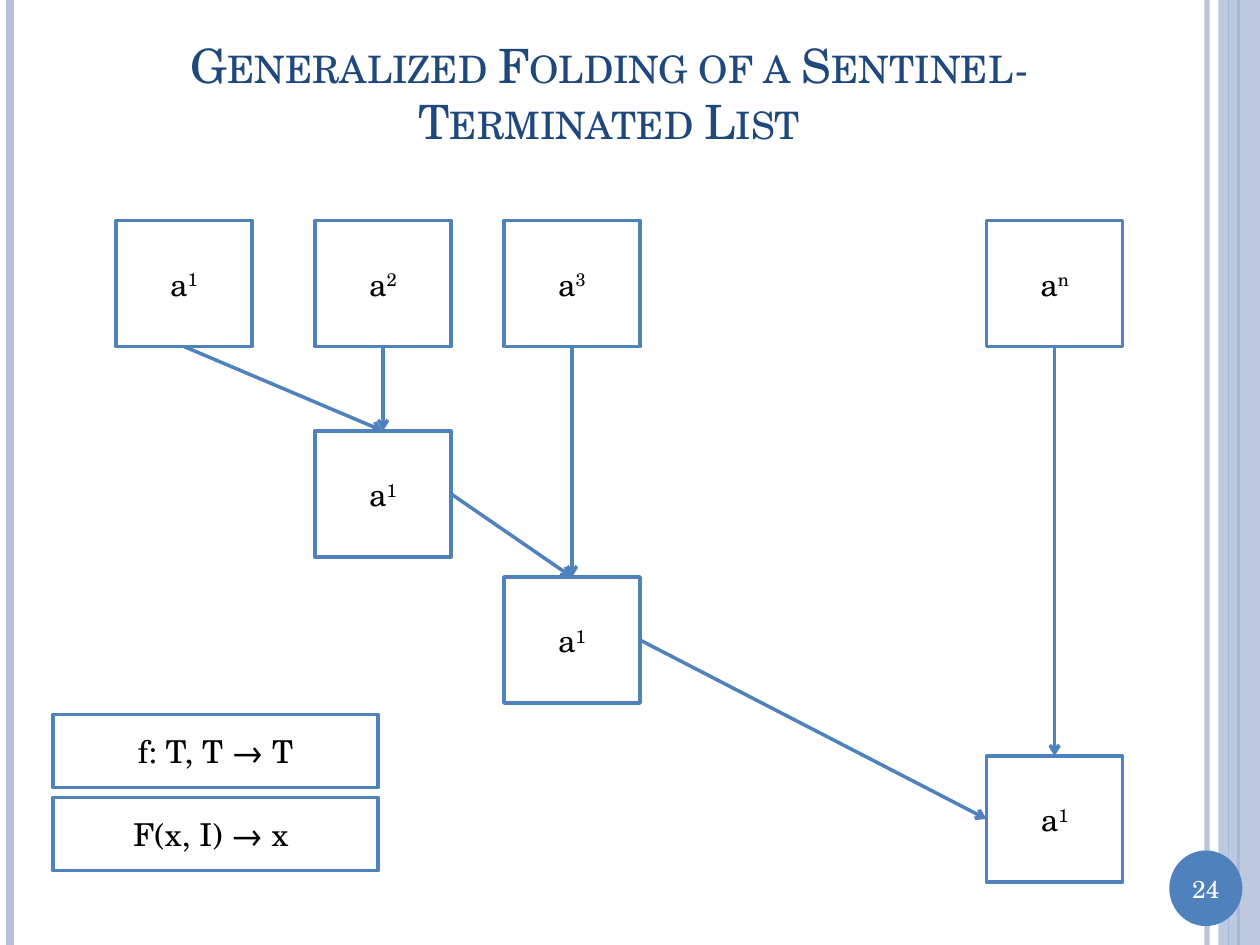
from lxml.etree import SubElement
from pptx import Presentation
from pptx.dml.color import RGBColor
from pptx.enum.shapes import MSO_CONNECTOR, MSO_SHAPE
from pptx.enum.text import MSO_ANCHOR, PP_ALIGN
from pptx.oxml.ns import qn
from pptx.util import Inches, Pt

TITLE = "Generalized Folding of a Sentinel-Terminated List"
SLIDE_NUMBER = "24"
COLUMNS = [0.92, 2.5, 4, 7.83]
INPUT_TOP = 1.75
INPUT_MARKS = ["1", "2", "3", "n"]
RESULT_TOPS = [3.42, 4.58, 6]
RESULT_MARK = "1"
CELL = (1.08, 1)
SIGNATURES = ["f: T, T → T", "F(x, I) → x "]
SIGNATURE_LEFT, SIGNATURE_TOP, SIGNATURE_STEP = 0.42, 5.67, 0.66
SIGNATURE_SIZE = (2.58, 0.58)
TOP, LEFT, BOTTOM, RIGHT = range(4)

THEME = {
    "font": "TeX Gyre Schola",
    "accent": "4F81BD", "stripe": "B3C1DB", "heading": "1F497D",
    "ink": "000000", "paper": "FFFFFF",
    "title": 27, "body": 18, "number": 14, "line": 2,
}
STRIPES = [
    (9.58, "stripe", 3, 93),
    (0.08, "stripe", 4.5, 100),
    (9.83, "accent", 1.5, 100),
    (9.75, "accent", 0.75, 100),
]


def color(role):
    return RGBColor.from_string(THEME[role])


def set_opacity(fill_parent, percent):
    srgb = next(fill_parent.iter(qn("a:srgbClr")))
    SubElement(srgb, qn("a:alpha"), val=str(percent * 1000))


def write(shape, text, size="body", ink="ink", superscript="", small_caps=False):
    frame = shape.text_frame
    frame.word_wrap = True
    frame.vertical_anchor = MSO_ANCHOR.MIDDLE
    paragraph = frame.paragraphs[0]
    paragraph.alignment = PP_ALIGN.CENTER
    for part, raised in ((text, False), (superscript, True)):
        if not part:
            continue
        run = paragraph.add_run()
        run.text = part
        run.font.name = THEME["font"]
        run.font.size = Pt(THEME[size])
        run.font.color.rgb = color(ink)
        properties = run.font._element
        if raised:
            properties.set("baseline", "30000")
        if small_caps:
            properties.set("cap", "small")


def add_panel(slide, box, kind=MSO_SHAPE.RECTANGLE, fill="paper", outline=None):
    panel = slide.shapes.add_shape(kind, *map(Inches, box))
    panel.shadow.inherit = False
    panel.fill.solid()
    panel.fill.fore_color.rgb = color(fill)
    if outline:
        panel.line.color.rgb = color(outline)
        panel.line.width = Pt(THEME["line"])
    else:
        panel.line.fill.background()
    return panel


def add_line(slide, start, end, role, width):
    line = slide.shapes.add_connector(
        MSO_CONNECTOR.STRAIGHT, *map(Inches, (*start, *end)))
    line.line.color.rgb = color(role)
    line.line.width = Pt(width)
    SubElement(line._element.spPr, qn("a:effectLst"))
    return line


def add_cell(slide, left, top, mark):
    cell = add_panel(slide, (left, top, *CELL), outline="accent")
    write(cell, "a", superscript=mark)
    return cell


def add_arrow(slide, source, source_side, target, target_side):
    arrow = add_line(slide, (0, 0), (1, 1), "accent", THEME["line"])
    arrow.begin_connect(source, source_side)
    arrow.end_connect(target, target_side)
    SubElement(arrow.line._get_or_add_ln(), qn("a:tailEnd"), type="arrow")


def add_frame(slide):
    for x, role, width, opacity in STRIPES:
        stripe = add_line(slide, (x, 0), (x, 7.5), role, width)
        if opacity < 100:
            set_opacity(stripe._element.spPr, opacity)
    band = add_panel(slide, (9.67, 0, 0.33, 7.5), fill="stripe")
    set_opacity(band._element.spPr, 87)
    add_panel(slide, (9.28, 6.75, 0.58, 0.6), MSO_SHAPE.OVAL, "accent")
    number = slide.shapes.add_textbox(*map(Inches, (9.28, 6.88, 0.58, 0.34)))
    write(number, SLIDE_NUMBER, size="number", ink="paper")


def add_title(slide):
    title = slide.shapes.title
    title.left, title.top, title.width, title.height = map(
        Inches, (0.5, 0.3, 8.67, 0.87))
    write(title, TITLE, size="title", ink="heading", small_caps=True)


def add_folding(slide):
    inputs = [add_cell(slide, left, INPUT_TOP, mark)
              for left, mark in zip(COLUMNS, INPUT_MARKS)]
    results = [add_cell(slide, left, top, RESULT_MARK)
               for left, top in zip(COLUMNS[1:], RESULT_TOPS)]
    first, second, last = results
    for source, result in zip(inputs[1:], results):
        add_arrow(slide, source, BOTTOM, result, TOP)
    add_arrow(slide, inputs[0], BOTTOM, first, TOP)
    add_arrow(slide, first, RIGHT, second, TOP)
    add_arrow(slide, second, RIGHT, last, LEFT)


def add_signatures(slide):
    for row, signature in enumerate(SIGNATURES):
        top = SIGNATURE_TOP + row * SIGNATURE_STEP
        panel = add_panel(
            slide, (SIGNATURE_LEFT, top, *SIGNATURE_SIZE), outline="accent")
        write(panel, signature)


def main():
    deck = Presentation()
    deck.slide_width, deck.slide_height = Inches(10), Inches(7.5)
    slide = deck.slides.add_slide(deck.slide_layouts[5])
    add_frame(slide)
    add_title(slide)
    add_folding(slide)
    add_signatures(slide)
    deck.save("out.pptx")


if __name__ == "__main__":
    main()
